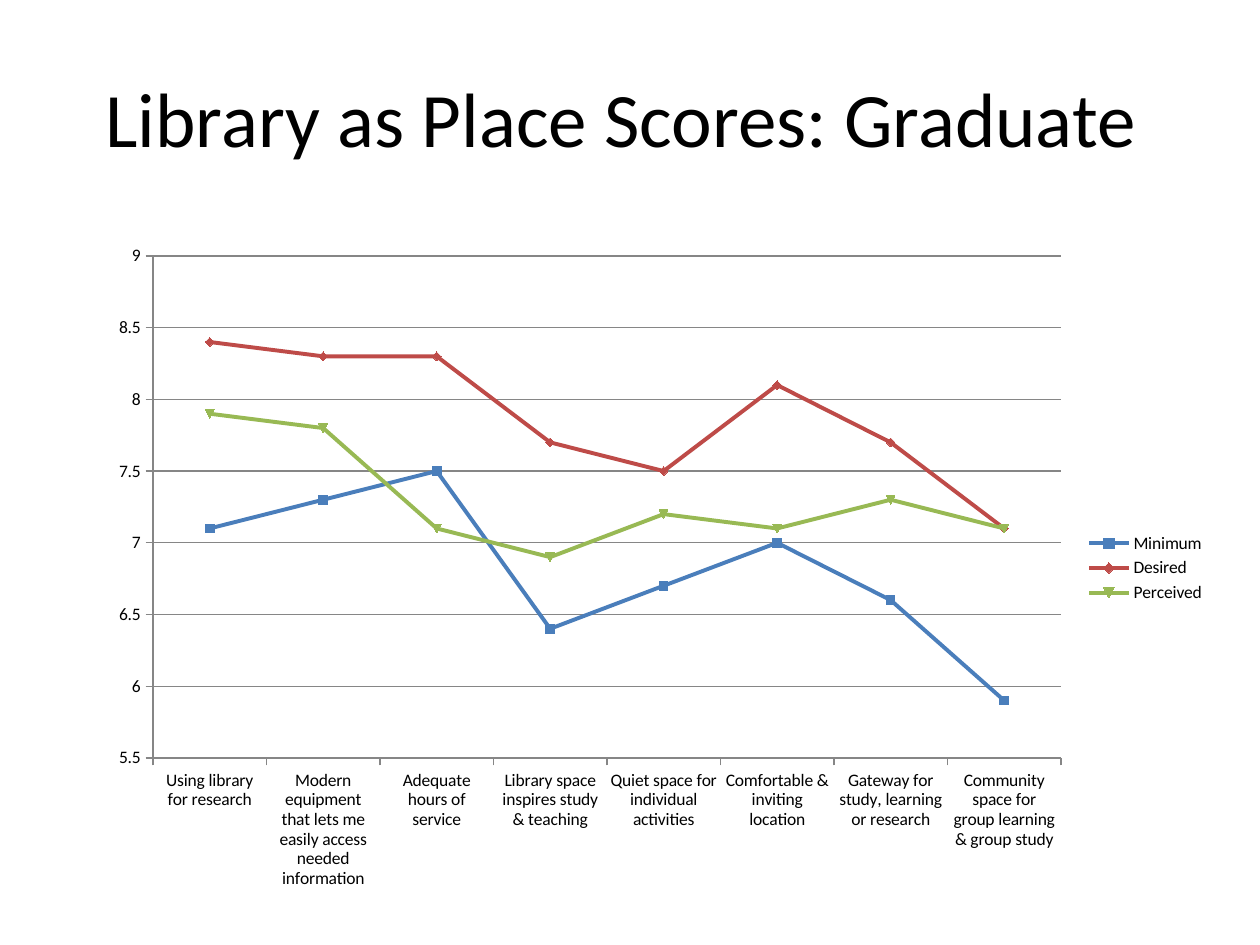
import pptx
import pptx.chart.data
import pptx.dml.color
import pptx.enum.chart
import pptx.enum.text
import pptx.oxml
import pptx.oxml.ns
import pptx.util

EMU_PER_PX = 914400 / 126
FONT = "Calibri"
BLACK = "000000"
AXIS_GRAY = "868686"

CATEGORIES = [
    "Using library for research",
    "Modern equipment that lets me easily access needed information",
    "Adequate hours of service",
    "Library space inspires study & teaching",
    "Quiet space for individual activities",
    "Comfortable & inviting location",
    "Gateway for study, learning or research",
    "Community space for group learning & group study",
]
# name, line colour, marker colour, scores
SERIES = [
    ("Minimum", "4A7EBB", "4F81BD", [7.1, 7.3, 7.5, 6.4, 6.7, 7.0, 6.6, 5.9]),
    ("Desired", "BE4B48", "C0504D", [8.4, 8.3, 8.3, 7.7, 7.5, 8.1, 7.7, 7.1]),
    ("Perceived", "98B954", "9BBB59", [7.9, 7.8, 7.1, 6.9, 7.2, 7.1, 7.3, 7.1]),
]


def px(length):
    return pptx.util.Emu(round(length * EMU_PER_PX))


def color(hex_string):
    return pptx.dml.color.RGBColor.from_string(hex_string)


def style_font(font, size):
    font.name = FONT
    font.size = pptx.util.Pt(size)
    font.color.rgb = color(BLACK)


def style_line(line, hex_string, width):
    line.color.rgb = color(hex_string)
    line.width = pptx.util.Pt(width)


def add_title(slide, left, top, width, height):
    title = slide.shapes.title
    title.left, title.top = px(left), px(top)
    title.width, title.height = px(width), px(height)
    text_frame = title.text_frame
    text_frame.text = "Library as Place Scores: Graduate "
    text_frame.vertical_anchor = pptx.enum.text.MSO_ANCHOR.MIDDLE
    paragraph = text_frame.paragraphs[0]
    paragraph.alignment = pptx.enum.text.PP_ALIGN.CENTER
    style_font(paragraph.runs[0].font, 44)


def set_plot_layout(chart, x, y, width, height):
    """Fix the inner plot area, as fractions of the chart box."""
    plot_area = chart._chartSpace.chart.plotArea
    for layout in plot_area.findall(pptx.oxml.ns.qn("c:layout")):
        plot_area.remove(layout)
    plot_area.insert(0, pptx.oxml.parse_xml(
        f'<c:layout {pptx.oxml.ns.nsdecls("c")}><c:manualLayout>'
        '<c:layoutTarget val="inner"/>'
        '<c:xMode val="edge"/><c:yMode val="edge"/>'
        f'<c:x val="{x}"/><c:y val="{y}"/>'
        f'<c:w val="{width}"/><c:h val="{height}"/>'
        '</c:manualLayout></c:layout>'))


def add_score_chart(slide, left, top, width, height):
    data = pptx.chart.data.CategoryChartData()
    data.categories = CATEGORIES
    for name, _, _, scores in SERIES:
        data.add_series(name, scores)
    chart = slide.shapes.add_chart(
        pptx.enum.chart.XL_CHART_TYPE.LINE_MARKERS,
        px(left), px(top), px(width), px(height), data).chart
    style_font(chart.font, 10)
    chart.has_title = False
    chart.plots[0].vary_by_categories = False
    set_plot_layout(chart, 56 / width, 23 / height, 908 / width, 502 / height)

    # Legend
    chart.has_legend = True
    chart.legend.position = pptx.enum.chart.XL_LEGEND_POSITION.RIGHT
    chart.legend.include_in_layout = False

    # Axes and gridlines
    for axis in (chart.category_axis, chart.value_axis):
        axis.major_tick_mark = pptx.enum.chart.XL_TICK_MARK.OUTSIDE
        axis.minor_tick_mark = pptx.enum.chart.XL_TICK_MARK.NONE
        style_line(axis.format.line, AXIS_GRAY, 0.75)
    value_axis = chart.value_axis
    value_axis.minimum_scale = 5.5
    value_axis.maximum_scale = 9
    value_axis.major_unit = 0.5
    value_axis.has_major_gridlines = True
    style_line(value_axis.major_gridlines.format.line, AXIS_GRAY, 0.75)

    # Series lines, with automatic marker shapes
    for series, (_, line, fill, _) in zip(chart.plots[0].series, SERIES):
        series.smooth = False
        style_line(series.format.line, line, 2.25)
        series.marker.size = 5
        series.marker.format.fill.solid()
        series.marker.format.fill.fore_color.rgb = color(fill)
        style_line(series.marker.format.line, line, 0.75)


def main():
    presentation = pptx.Presentation()
    presentation.slide_width, presentation.slide_height = px(1260), px(945)
    slide = presentation.slides.add_slide(presentation.slide_layouts[5])
    add_title(slide, 63, 38, 1134, 158)
    add_score_chart(slide, 97, 233, 1121, 670)
    presentation.save("out.pptx")


if __name__ == "__main__":
    main()
